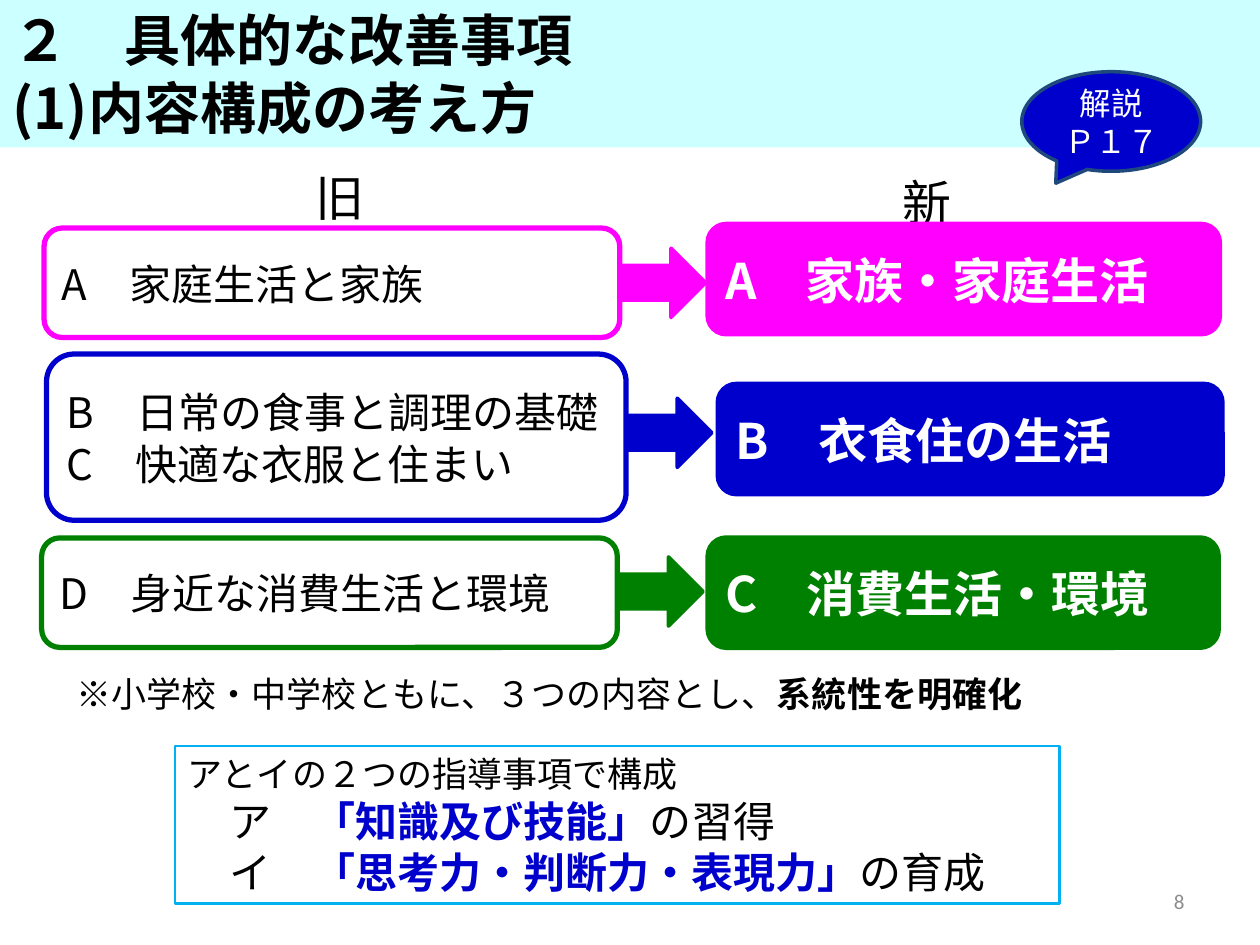
from dataclasses import dataclass

from lxml.etree import SubElement
from pptx import Presentation
from pptx.dml.color import RGBColor
from pptx.enum.shapes import MSO_SHAPE
from pptx.enum.text import MSO_ANCHOR, PP_ALIGN
from pptx.oxml.ns import qn
from pptx.util import Pt


@dataclass(frozen=True)
class Theme:
    """Colours, fonts and type sizes of the deck."""
    font: str = "Noto Sans CJK JP"
    number_font: str = "Calibri"
    black: str = "000000"
    white: str = "FFFFFF"
    grey: str = "8C8C8C"
    banner: str = "CCFFFF"
    magenta: str = "FF00FF"
    blue: str = "0000CC"
    green: str = "008000"
    navy: str = "1F497D"
    sky: str = "00B0F0"
    title: int = 32
    heading: int = 28
    body: int = 24
    note: int = 20
    callout: int = 18
    number: int = 12
    leading: float = 1.22


THEME = Theme()


def add_span(para, text, size=THEME.body, color=THEME.black, bold=False, font=THEME.font):
    """Append a formatted run to a paragraph."""
    span = para.add_run()
    span.text = text
    span.font.size = Pt(size)
    span.font.bold = bold
    span.font.name = font
    span.font.color.rgb = RGBColor.from_string(color)
    SubElement(span.font._element, qn("a:ea"), typeface=font)


class SlideBuilder:
    """Draws styled elements on the current slide."""

    def __init__(self, page, theme):
        """Keep the slide and its style."""
        self.page = page
        self.theme = theme

    def fill_text(self, box, paras, align=PP_ALIGN.LEFT, anchor=MSO_ANCHOR.MIDDLE, **style):
        """Fill a box with paragraphs, each a list of (text, format) pairs."""
        frame = box.text_frame
        frame.word_wrap = True
        frame.vertical_anchor = anchor
        for index, spans in enumerate(paras):
            para = frame.paragraphs[0] if index == 0 else frame.add_paragraph()
            para.alignment = align
            para.space_before = Pt(0)
            formats = [{**style, **extra} for _, extra in spans]
            size = max(each.get("size", self.theme.body) for each in formats)
            para.line_spacing = Pt(round(size * self.theme.leading, 1))
            for (text, _), each in zip(spans, formats):
                add_span(para, text, **each)

    def title(self, area, lines):
        """Turn the title placeholder into the top banner."""
        box = self.page.shapes.title
        box.left, box.top, box.width, box.height = map(Pt, area)
        box.fill.solid()
        box.fill.fore_color.rgb = RGBColor.from_string(self.theme.banner)
        self.fill_text(box, [[(line, {})] for line in lines], anchor=MSO_ANCHOR.BOTTOM,
                       size=self.theme.title, bold=True)

    def text(self, area, spans, **style):
        """Add a one-paragraph text box."""
        box = self.page.shapes.add_textbox(*map(Pt, area))
        self.fill_text(box, [spans], **style)

    def shape(self, kind, area, line, weight, fill=None, parent=None):
        """Add a preset shape to the slide or to a group."""
        box = (parent or self.page).shapes.add_shape(kind, *map(Pt, area))
        box.shadow.inherit = False
        if fill:
            box.fill.solid()
            box.fill.fore_color.rgb = RGBColor.from_string(fill)
        else:
            box.fill.background()
        box.line.color.rgb = RGBColor.from_string(line)
        box.line.width = Pt(weight)
        return box

    def change(self, color, old_area, old_lines, arrow_top, new_area, new_text):
        """Add a grouped row: old content, arrow, new content."""
        group = self.page.shapes.add_group_shape()
        old = self.shape(MSO_SHAPE.ROUNDED_RECTANGLE, old_area, color, 3, parent=group)
        self.fill_text(old, [[(line, {})] for line in old_lines])
        arrow_area = (old_area[0] + old_area[2], arrow_top, 49, 39.6)
        self.shape(MSO_SHAPE.RIGHT_ARROW, arrow_area, color, 2, color, group)
        new = self.shape(MSO_SHAPE.ROUNDED_RECTANGLE, new_area, color, 3, color, group)
        self.fill_text(new, [[(new_text, {})]], size=self.theme.heading,
                       color=self.theme.white, bold=True)

    def callout(self, area, lines):
        """Add the page-reference speech bubble."""
        box = self.shape(MSO_SHAPE.OVAL_CALLOUT, area, self.theme.navy, 2, self.theme.blue)
        box.adjustments[0], box.adjustments[1] = -0.31, 0.62
        self.fill_text(box, [[(line, {})] for line in lines], align=PP_ALIGN.CENTER,
                       size=self.theme.callout, color=self.theme.white)

    def frame(self, area, paras):
        """Add an outlined box of text."""
        box = self.shape(MSO_SHAPE.RECTANGLE, area, self.theme.sky, 1.5)
        self.fill_text(box, paras)


def main():
    """Build the slide and save the deck."""
    deck = Presentation()
    deck.slide_width, deck.slide_height = Pt(720), Pt(540)
    builder = SlideBuilder(deck.slides.add_slide(deck.slide_layouts[5]), THEME)

    builder.title((0, -2.2, 720, 86.4), ["２　具体的な改善事項", "(1)内容構成の考え方"])
    builder.callout((583.9, 41, 102.2, 56.9), ["解説", "Ｐ１７"])
    for left, top, label in [(140.4, 86.4, "旧"), (475.9, 89.3, "新")]:
        builder.text((left, top, 108, 51.1), [(label, {})],
                     align=PP_ALIGN.CENTER, size=THEME.heading)

    rows = [
        (THEME.magenta, (25.2, 130.3, 329, 62.6), ["A　家庭生活と家族"],
         141.8, (404.6, 128.2, 292.3, 62.6), "A　家族・家庭生活"),
        (THEME.blue, (26.6, 202.3, 331.2, 95),
         ["B　日常の食事と調理の基礎", "C　快適な衣服と住まい"],
         227.5, (410.4, 219.6, 288, 62.6), "B　衣食住の生活"),
        (THEME.green, (23.8, 307.4, 329, 62.6), ["D　身近な消費生活と環境"],
         318.2, (404.6, 307.4, 291.6, 62.6), "C　消費生活・環境"),
    ]
    for row in rows:
        builder.change(*row)

    builder.text((36.7, 380.2, 669.6, 31.7),
                 [("※小学校・中学校ともに、３つの内容とし、", {}),
                  ("系統性を明確化", {"bold": True})],
                 anchor=MSO_ANCHOR.TOP, size=THEME.note)
    key = {"color": THEME.blue, "bold": True}
    builder.frame((100.1, 426.2, 505.4, 90), [
        [("アとイの２つの指導事項で構成", {"size": THEME.note})],
        [("　ア", {}), ("　「知識及び技能」", key), ("の習得", {})],
        [("　イ　", {}), ("「思考力・判断力・表現力」", key), ("の育成", {})],
    ])
    builder.text((516.2, 500.4, 167.8, 28.8), [("8", {})], align=PP_ALIGN.RIGHT,
                 size=THEME.number, color=THEME.grey, font=THEME.number_font)
    deck.save("out.pptx")


if __name__ == "__main__":
    main()
